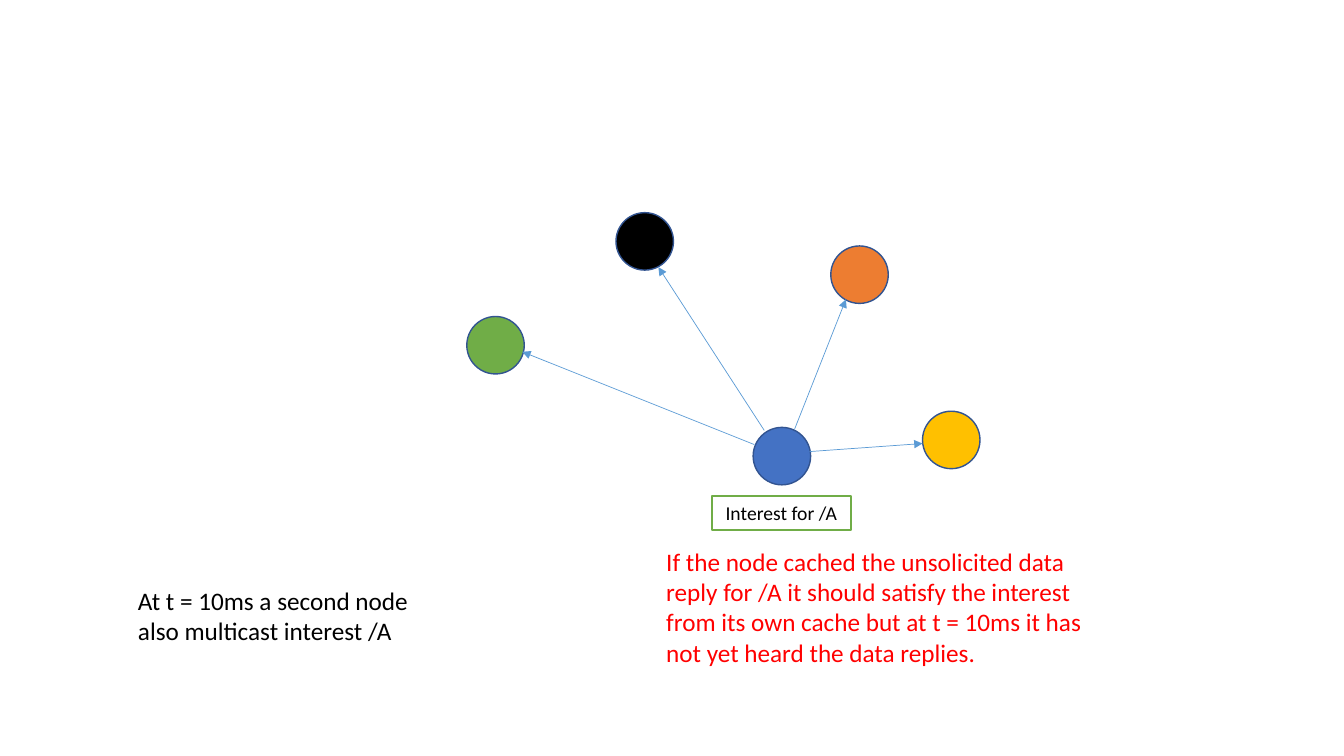
from dataclasses import dataclass

from lxml.etree import SubElement
from pptx import Presentation
from pptx.dml.color import RGBColor
from pptx.enum.shapes import MSO_CONNECTOR, MSO_SHAPE
from pptx.enum.text import MSO_ANCHOR, PP_ALIGN
from pptx.oxml.ns import qn
from pptx.util import Inches, Pt


@dataclass(frozen=True)
class Theme:
    font: str = "Calibri"
    body: int = 18
    small: int = 14
    ink: str = "000000"
    alert: str = "FF0000"
    paper: str = "FFFFFF"
    rim: str = "325491"
    arrow: str = "5B9BD5"
    green: str = "70AD47"
    gold: str = "FFC000"
    orange: str = "ED7D31"
    blue: str = "4472C4"


THEME = Theme()
NODE = 5.7  # node diameter in grid units


def grid(units):
    """Ten grid units make one inch."""
    return Inches(units / 10)


def paint(shape, fill, line):
    shape.shadow.inherit = False
    shape.fill.solid()
    shape.fill.fore_color.rgb = RGBColor.from_string(fill)
    shape.line.color.rgb = RGBColor.from_string(line)
    shape.line.width = Pt(1)


def write(shape, text, size, color, align=PP_ALIGN.LEFT, wrap=True):
    frame = shape.text_frame
    frame.text = text
    frame.word_wrap = wrap
    para = frame.paragraphs[0]
    para.alignment = align
    font = para.runs[0].font
    font.name, font.size = THEME.font, Pt(size)
    font.color.rgb = RGBColor.from_string(color)


def add_arrow(slide, start, end):
    line = slide.shapes.add_connector(
        MSO_CONNECTOR.STRAIGHT, *map(grid, start + end))
    line.line.color.rgb = RGBColor.from_string(THEME.arrow)
    line.line.width = Pt(0.5)
    SubElement(line.line._get_or_add_ln(), qn("a:tailEnd"), type="triangle")
    SubElement(line._element.spPr, qn("a:effectLst"))


def add_network(slide, left, top):
    """Draw the sender, its neighbours and the interest it multicasts."""
    def put(x, y):
        return left + x, top + y

    # Nodes
    nodes = [
        (0, 10.3, THEME.green),
        (45.2, 19.7, THEME.gold),
        (14.8, 0, THEME.ink),
        (36.1, 3.3, THEME.orange),
        (28.4, 21.3, THEME.blue),
    ]
    for x, y, color in nodes:
        node = slide.shapes.add_shape(
            MSO_SHAPE.OVAL, *map(grid, put(x, y) + (NODE, NODE)))
        paint(node, color, THEME.rim)

    # Arrows from the sender to each neighbour
    links = [
        ((28.5, 23), (5.5, 13.8)),
        ((29.5, 21.6), (19, 5.4)),
        ((32.5, 21.5), (37.6, 8.6)),
        ((34, 23.7), (45.2, 22.9)),
    ]
    for start, end in links:
        add_arrow(slide, put(*start), put(*end))

    # Label below the sender
    label = slide.shapes.add_shape(
        MSO_SHAPE.RECTANGLE, *map(grid, put(24.3, 28.1) + (13.8, 3.4)))
    paint(label, THEME.paper, THEME.green)
    label.text_frame.vertical_anchor = MSO_ANCHOR.MIDDLE
    write(label, "Interest for /A", THEME.small, THEME.ink,
          PP_ALIGN.CENTER, wrap=False)


def add_note(slide, box, text, color):
    note = slide.shapes.add_textbox(*map(grid, box))
    write(note, text, THEME.body, color)


def main():
    deck = Presentation()
    deck.slide_width, deck.slide_height = Inches(13.33), Inches(7.5)
    slide = deck.slides.add_slide(deck.slide_layouts[6])

    add_network(slide, 46.3, 21.1)

    # Notes below the network
    add_note(slide, (12.7, 57.6, 30, 7.1),
             "At t = 10ms a second node also multicast interest /A", THEME.ink)
    add_note(slide, (65.1, 53.7, 43.4, 13.1),
             "If the node cached the unsolicited data reply for /A it should "
             "satisfy the interest from its own cache but at t = 10ms it has "
             "not yet heard the data replies.", THEME.alert)

    deck.save("out.pptx")


if __name__ == "__main__":
    main()
